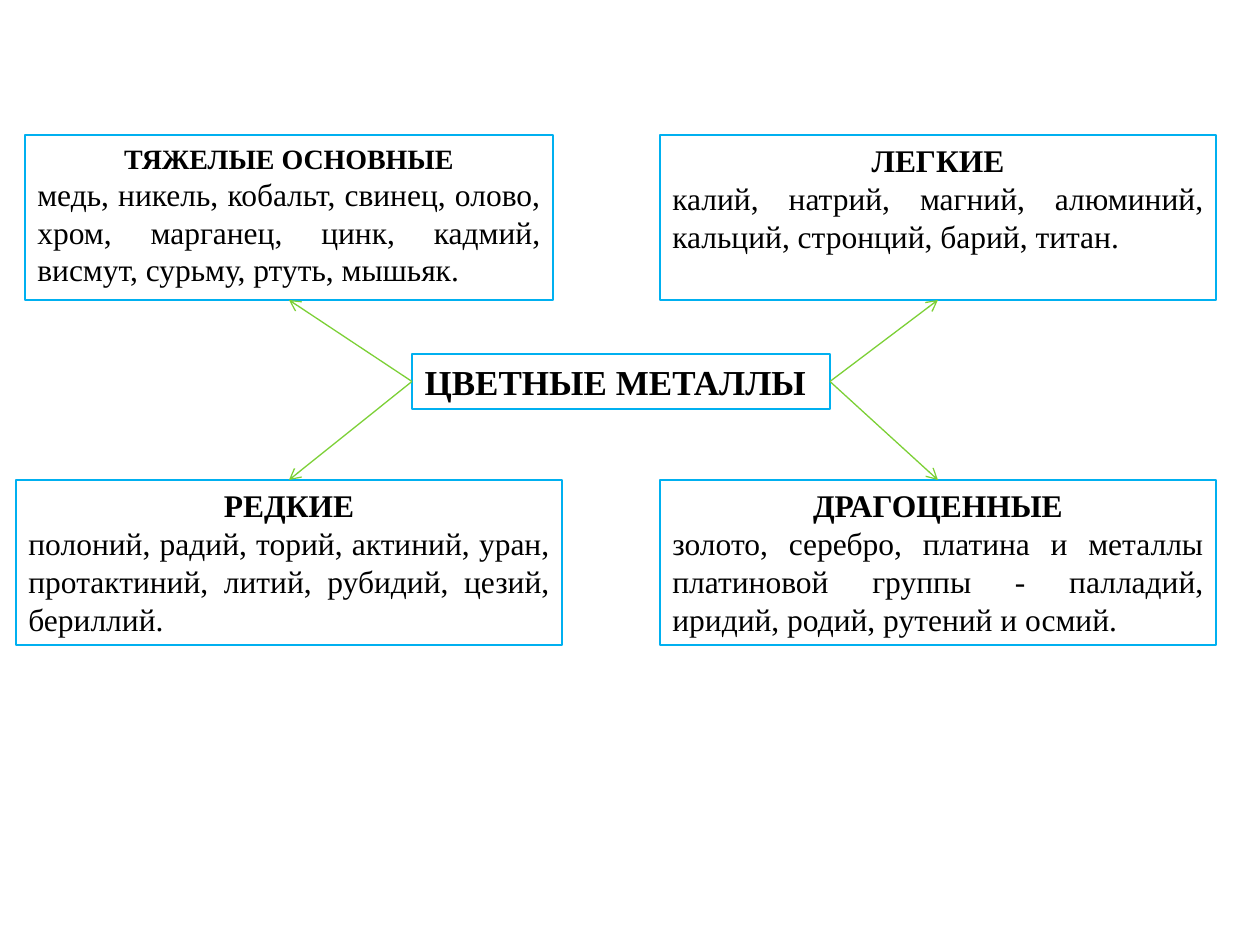
from lxml import etree
from pptx import Presentation
from pptx import util as u
from pptx.dml.color import RGBColor
from pptx.enum import shapes, text
from pptx.oxml import ns

PX_PER_INCH = 126
FONT = "Times New Roman"
COLORS = {"border": "00B0F0", "arrow": "7CD036", "ink": "000000"}
TOP, LEFT, BOTTOM, RIGHT = 0, 1, 2, 3
UPPER_ROW, LOWER_ROW, GROUP_HEIGHT = 135, 480, 165
GROUPS = [
    ("ТЯЖЕЛЫЕ ОСНОВНЫЕ", 16,
     ["медь, никель, кобальт, свинец, олово, хром, марганец, цинк, кадмий, "
      "висмут, сурьму, ртуть, мышьяк."],
     (25, UPPER_ROW, 528), LEFT, BOTTOM),
    ("ЛЕГКИЕ", 18,
     ["калий, натрий, магний, алюминий, кальций, стронций, барий, титан."],
     (660, UPPER_ROW, 556), RIGHT, BOTTOM),
    ("РЕДКИЕ", 18,
     ["полоний, радий, торий, актиний, уран, ",
      "протактиний, литий, рубидий, цезий, бериллий."],
     (16, LOWER_ROW, 546), LEFT, TOP),
    ("ДРАГОЦЕННЫЕ", 18,
     ["золото, серебро, платина и металлы платиновой группы - палладий, "
      "иридий, родий, рутений и осмий."],
     (660, LOWER_ROW, 556), RIGHT, TOP),
]


def px(length):
    """Turn pixels into EMU."""
    return u.Inches(length / PX_PER_INCH)


def set_line(line, color):
    """Give a line its colour and the common width."""
    line.color.rgb = RGBColor.from_string(COLORS[color])
    line.width = u.Pt(0.75)


def format_box(box):
    """Give a box its border and text frame settings."""
    set_line(box.line, "border")
    frame = box.text_frame
    frame.word_wrap = True
    frame.auto_size = text.MSO_AUTO_SIZE.NONE
    frame.vertical_anchor = text.MSO_ANCHOR.TOP


def format_para(para, size, bold, alignment):
    """Format a paragraph and its runs."""
    para.alignment = alignment
    for span in para.runs:
        span.font.name = FONT
        span.font.size = u.Pt(size)
        span.font.bold = bold
        span.font.color.rgb = RGBColor.from_string(COLORS["ink"])


def place_title(page):
    """Place the central title and return it."""
    title = page.shapes.title
    title.left, title.top, title.width, title.height = map(px, (412, 354, 418, 55))
    title.text_frame.text = "ЦВЕТНЫЕ МЕТАЛЛЫ"
    format_box(title)
    format_para(title.text_frame.paragraphs[0], 20, True, text.PP_ALIGN.LEFT)
    return title


def add_group(page, heading, heading_size, lines, place):
    """Add a bordered box with a heading and the metals below it."""
    box = page.shapes.add_textbox(*map(px, (*place, GROUP_HEIGHT)))
    box.text_frame.text = "\n".join([heading, *lines])
    format_box(box)
    first, *rest = box.text_frame.paragraphs
    format_para(first, heading_size, True, text.PP_ALIGN.CENTER)
    for para in rest:
        format_para(para, 18, False, text.PP_ALIGN.JUSTIFY)
    return box


def add_arrow(page, start, start_side, end, end_side):
    """Join two boxes with an open-headed arrow."""
    arrow = page.shapes.add_connector(shapes.MSO_CONNECTOR.STRAIGHT, 0, 0, 0, 0)
    arrow.begin_connect(start, start_side)
    arrow.end_connect(end, end_side)
    set_line(arrow.line, "arrow")
    etree.SubElement(arrow.line._get_or_add_ln(), ns.qn("a:tailEnd"), type="arrow")
    etree.SubElement(arrow._element.spPr, ns.qn("a:effectLst"))


def main():
    """Build the slide and save it."""
    deck = Presentation()
    deck.slide_width, deck.slide_height = u.Inches(10), u.Inches(7.5)
    page = deck.slides.add_slide(deck.slide_layouts.get_by_name("Title Only"))
    title = place_title(page)
    boxes = [add_group(page, *group[:4]) for group in GROUPS]
    for box, (*_, title_side, box_side) in zip(boxes, GROUPS):
        add_arrow(page, title, title_side, box, box_side)
    deck.save("out.pptx")


if __name__ == "__main__":
    main()
